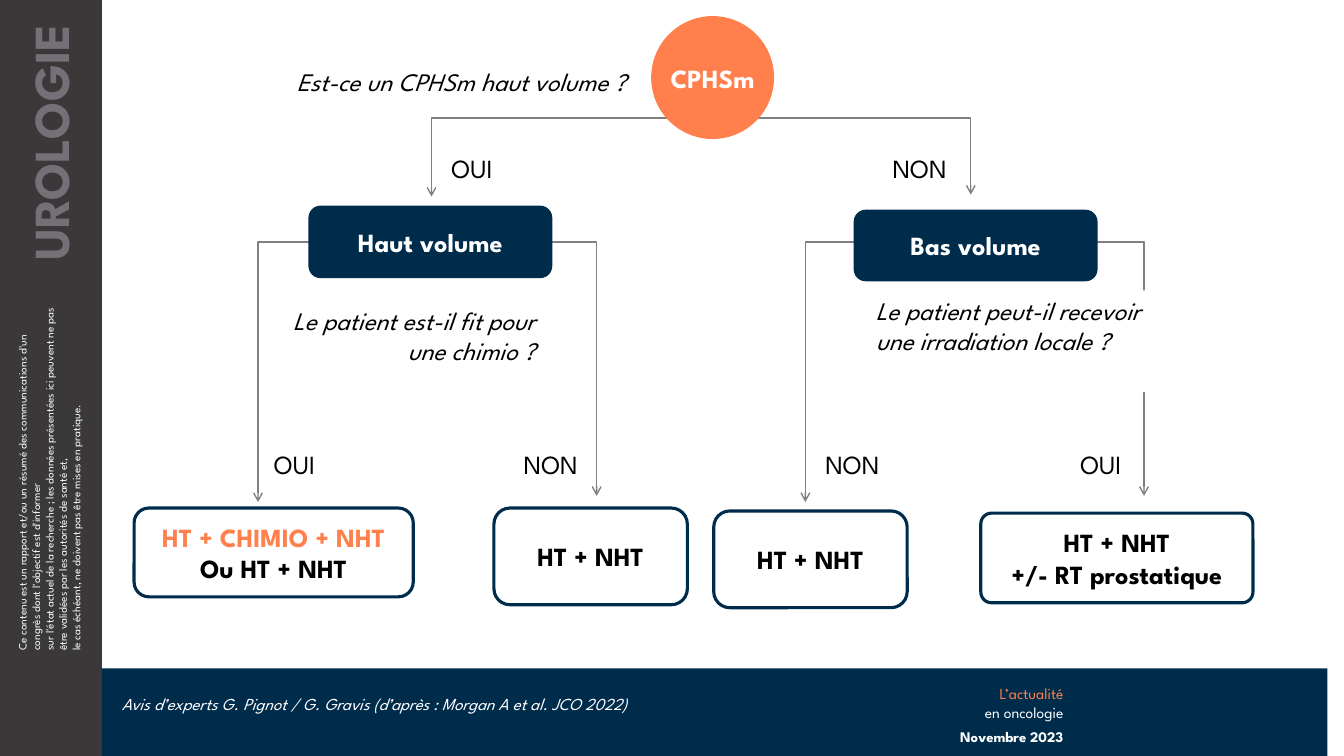
from dataclasses import dataclass

from lxml.etree import SubElement
from pptx import Presentation
from pptx.dml.color import RGBColor
from pptx.enum.shapes import MSO_SHAPE
from pptx.enum.text import MSO_ANCHOR, PP_ALIGN
from pptx.oxml.ns import qn
from pptx.shapes.autoshape import Shape
from pptx.slide import Slide
from pptx.util import Pt


@dataclass(frozen=True)
class Theme:
    font: str = "League Spartan"
    navy: str = "002C4C"
    orange: str = "FF7F4D"
    charcoal: str = "3A3839"
    grey: str = "737078"
    arrow: str = "808080"
    white: str = "FFFFFF"
    black: str = "000000"
    section: float = 36
    node: float = 18.7
    question: float = 18
    source: float = 12
    series: float = 11
    date: float = 10.5
    disclaimer: float = 8


THEME = Theme()


@dataclass(frozen=True)
class Box:
    left: float
    top: float
    width: float
    height: float


@dataclass(frozen=True)
class Line:
    text: str
    color: str = THEME.black


@dataclass(frozen=True)
class Style:
    size: float
    align: PP_ALIGN = PP_ALIGN.LEFT
    bold: bool = False
    italic: bool = False
    anchor: MSO_ANCHOR = MSO_ANCHOR.TOP


@dataclass(frozen=True)
class Label:
    box: Box
    lines: tuple[Line, ...]
    style: Style
    fill: str | None = None
    rotation: float = 0
    right_inset: float = 7.2


@dataclass(frozen=True)
class Node:
    box: Box
    lines: tuple[Line, ...] = ()
    kind: MSO_SHAPE = MSO_SHAPE.ROUNDED_RECTANGLE
    fill: str | None = None
    outline: str | None = None
    corner: float | None = None


@dataclass(frozen=True)
class Fork:
    left: float
    right: float
    top: float
    left_end: float
    right_end: float


NODE_STYLE = Style(THEME.node, PP_ALIGN.CENTER, bold=True, anchor=MSO_ANCHOR.MIDDLE)
ANSWER = Style(THEME.node)
ANSWER_RIGHT = Style(THEME.node, PP_ALIGN.RIGHT)
QUESTION = Style(THEME.question, italic=True)
QUESTION_RIGHT = Style(THEME.question, PP_ALIGN.RIGHT, italic=True)

BANDS = (
    Node(Box(61.2, 477.4, 887, 62.6), kind=MSO_SHAPE.RECTANGLE, fill=THEME.navy),
    Node(Box(0, 0, 72.7, 540), kind=MSO_SHAPE.RECTANGLE, fill=THEME.charcoal),
)

FORKS = (
    Fork(575.3, 817.2, 172.8, 358.6, 354.2),
    Fork(184.3, 426.2, 172.8, 358.6, 354.2),
    Fork(308.2, 693.4, 84.2, 140.4, 139),
)

NODES = (
    Node(Box(609.8, 149.8, 174.2, 51.1), (Line("Bas volume", THEME.white),), fill=THEME.navy),
    Node(Box(220.3, 146.9, 174.2, 51.8), (Line("Haut volume", THEME.white),), fill=THEME.navy),
    Node(Box(465.1, 11.5, 87.8, 87.8), (Line("CPHSm", THEME.white),),
         kind=MSO_SHAPE.OVAL, fill=THEME.orange),
    Node(Box(95.8, 362.9, 199.4, 63.4),
         (Line("HT + CHIMIO + NHT", THEME.orange), Line("Ou HT + NHT")), outline=THEME.navy),
    Node(Box(352.8, 362.9, 138.2, 69.1), (Line("HT + NHT"),), outline=THEME.navy),
    Node(Box(509.8, 365, 138.2, 69.1), (Line("HT + NHT"),), outline=THEME.navy),
    Node(Box(700.6, 366.5, 194.4, 64.1),
         (Line("HT + NHT"), Line("+/- RT prostatique")), outline=THEME.navy, corner=0.12),
)

DISCLAIMER = (
    "Ce contenu est un rapport et/ou un résumé des communications d'un congrès "
    "dont l'objectif est d'informer\v"
    "sur l'état actuel de la recherche ; les données présentées ici peuvent ne pas "
    "être validées par les autorités de santé et,\v"
    "le cas échéant, ne doivent pas être mises en pratique."
)

LABELS = (
    Label(Box(-94.3, 314.6, 259.2, 55.4), (Line(DISCLAIMER, THEME.white),),
          Style(THEME.disclaimer), rotation=270),
    Label(Box(-74.9, 85, 221, 51.1), (Line("UROLOGIE", THEME.grey),),
          Style(THEME.section, PP_ALIGN.RIGHT, bold=True), rotation=270, right_inset=17.3),
    Label(Box(648.7, 485.3, 118.1, 33.8),
          (Line("L’actualité", THEME.orange), Line("en oncologie", THEME.white)),
          Style(THEME.series, PP_ALIGN.RIGHT)),
    Label(Box(648.7, 516.2, 110.9, 19.4), (Line("Novembre 2023", THEME.white),),
          Style(THEME.date, PP_ALIGN.RIGHT, bold=True), right_inset=0),
    Label(Box(79.9, 471.6, 478.1, 62.6),
          (Line("Avis d’experts G. Pignot / G. Gravis (d’après : Morgan A et al. JCO 2022)",
                THEME.white),),
          Style(THEME.source, italic=True, anchor=MSO_ANCHOR.MIDDLE)),
    Label(Box(108, 43.9, 346.3, 28.8), (Line("Est-ce un CPHSm haut volume ?"),), QUESTION_RIGHT),
    Label(Box(200.9, 214.6, 188.6, 51.1), (Line("Le patient est-il fit pour une chimio ?"),),
          QUESTION_RIGHT, fill=THEME.white),
    Label(Box(618.5, 207.4, 205.9, 72.7),
          (Line("Le patient peut-il recevoir une irradiation locale ?"),),
          QUESTION, fill=THEME.white),
    *(Label(Box(left, top, 79.2, 30.2), (Line(answer),), style)
      for left, top, answer, style in (
          (315.4, 105.1, "OUI", ANSWER),
          (604.1, 105.1, "NON", ANSWER_RIGHT),
          (188.6, 316.8, "OUI", ANSWER),
          (340.6, 316.8, "NON", ANSWER_RIGHT),
          (764.6, 316.8, "OUI", ANSWER),
          (582.5, 316.8, "NON", ANSWER),
      )),
)


def in_points(box: Box) -> tuple[Pt, Pt, Pt, Pt]:
    return Pt(box.left), Pt(box.top), Pt(box.width), Pt(box.height)


def set_fill(shape: Shape, color: str | None) -> None:
    if color is None:
        shape.fill.background()
    else:
        shape.fill.solid()
        shape.fill.fore_color.rgb = RGBColor.from_string(color)


def write_lines(shape: Shape, lines: tuple[Line, ...], style: Style) -> None:
    frame = shape.text_frame
    frame.vertical_anchor = style.anchor
    frame.text = "\n".join(line.text for line in lines)
    for paragraph, line in zip(frame.paragraphs, lines):
        paragraph.alignment = style.align
        for run in paragraph.runs:
            run.font.name = THEME.font
            run.font.size = Pt(style.size)
            run.font.bold = style.bold
            run.font.italic = style.italic
            run.font.color.rgb = RGBColor.from_string(line.color)


def draw_node(slide: Slide, node: Node) -> None:
    shape = slide.shapes.add_shape(node.kind, *in_points(node.box))
    shape.shadow.inherit = False
    set_fill(shape, node.fill)
    if node.outline:
        shape.line.color.rgb = RGBColor.from_string(node.outline)
        shape.line.width = Pt(2.25)
    else:
        shape.line.fill.background()
    if node.corner is not None:
        shape.adjustments[0] = node.corner
    if node.lines:
        shape.text_frame.word_wrap = False
        write_lines(shape, node.lines, NODE_STYLE)


def draw_label(slide: Slide, label: Label) -> None:
    shape = slide.shapes.add_textbox(*in_points(label.box))
    shape.rotation = label.rotation
    set_fill(shape, label.fill)
    shape.text_frame.word_wrap = True
    shape.text_frame.margin_right = Pt(label.right_inset)
    write_lines(shape, label.lines, label.style)


def draw_fork(slide: Slide, fork: Fork) -> None:
    """Draw a bracket whose two legs point down with open arrowheads."""
    builder = slide.shapes.build_freeform(Pt(fork.left), Pt(fork.left_end))
    corners = ((fork.left, fork.top), (fork.right, fork.top), (fork.right, fork.right_end))
    builder.add_line_segments([(Pt(x), Pt(y)) for x, y in corners], close=False)
    shape = builder.convert_to_shape()
    shape.shadow.inherit = False
    shape.fill.background()
    shape.line.color.rgb = RGBColor.from_string(THEME.arrow)
    shape.line.width = Pt(1)
    outline = shape.line._get_or_add_ln()
    for end in ("a:headEnd", "a:tailEnd"):
        SubElement(outline, qn(end), type="arrow")


def main() -> None:
    presentation = Presentation()
    presentation.slide_width, presentation.slide_height = Pt(960), Pt(540)
    slide = presentation.slides.add_slide(presentation.slide_layouts[6])
    for band in BANDS:
        draw_node(slide, band)
    for fork in FORKS:
        draw_fork(slide, fork)
    for node in NODES:
        draw_node(slide, node)
    for label in LABELS:
        draw_label(slide, label)
    presentation.save("out.pptx")


if __name__ == "__main__":
    main()
